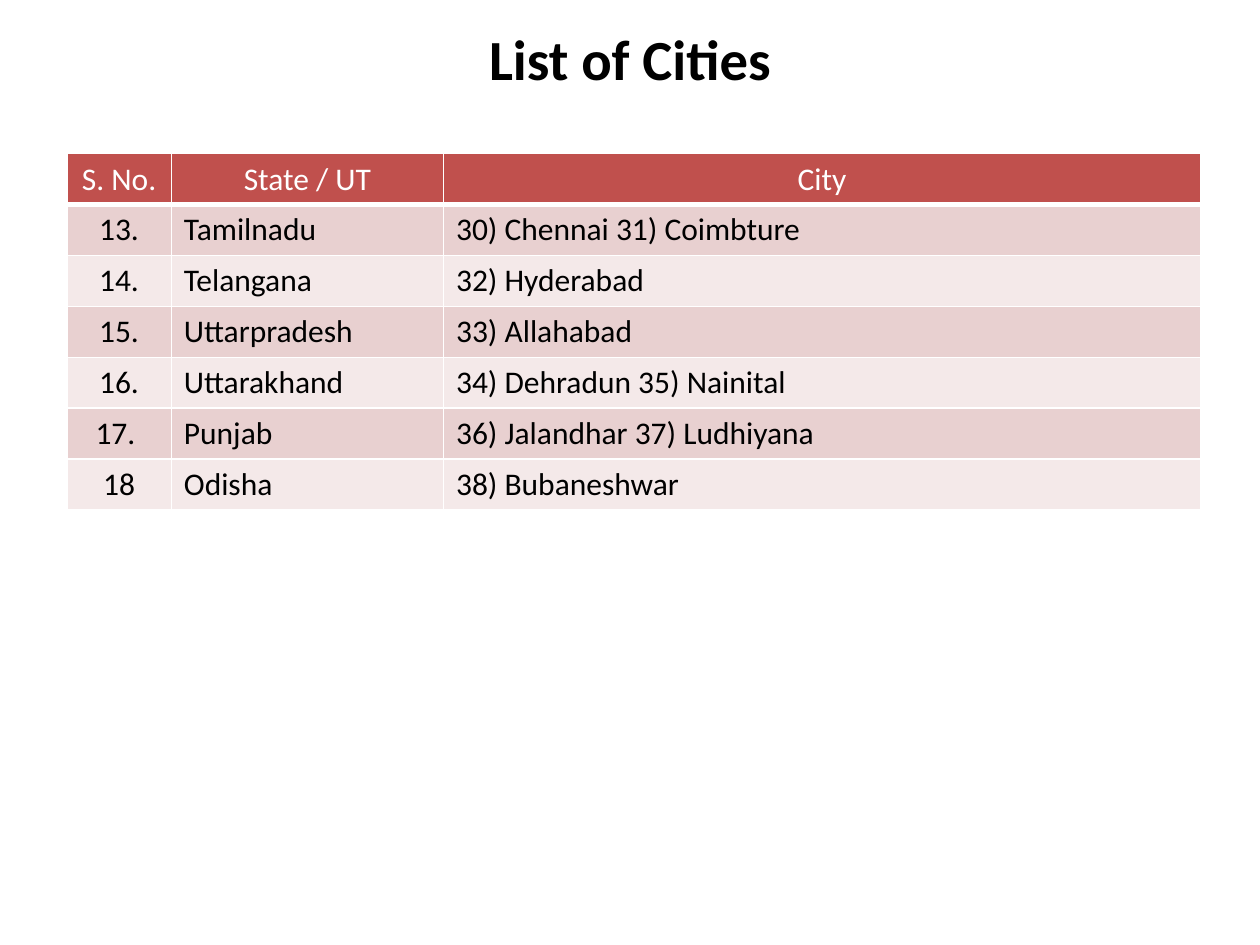
from lxml.etree import SubElement
from pptx import Presentation
from pptx.dml.color import RGBColor
from pptx.enum.text import MSO_ANCHOR, PP_ALIGN
from pptx.oxml.ns import qn
from pptx.util import Inches, Pt

HEADER = ("S. No.", "State / UT", "City")
CITIES = (
    ("13.", "Tamilnadu", "30) Chennai 31) Coimbture"),
    ("14.", "Telangana", "32) Hyderabad"),
    ("15.", "Uttarpradesh", "33) Allahabad"),
    ("16.", "Uttarakhand", "34) Dehradun 35) Nainital"),
    ("17. ", "Punjab", "36) Jalandhar 37) Ludhiyana"),
    ("18", "Odisha", "38) Bubaneshwar"),
)
COLUMN_WIDTHS = (0.83, 2.16, 6.01)
HEADER_FILL = "C0504D"
BAND_FILLS = ("F4E9E9", "E8D0D0")
WHITE, BLACK = "FFFFFF", "000000"


def color(hex_value):
    return RGBColor.from_string(hex_value)


def write(frame, text, size, hex_color, align, bold=False):
    frame.text = text
    paragraph = frame.paragraphs[0]
    paragraph.alignment = align
    font = paragraph.runs[0].font
    font.name = "Calibri"
    font.size = Pt(size)
    font.bold = bold
    font.color.rgb = color(hex_color)


def set_borders(cell, top, bottom):
    """Draw white cell borders; top and bottom are widths in points."""
    properties = cell._tc.get_or_add_tcPr()
    for side, width in (("L", 1), ("R", 1), ("T", top), ("B", bottom)):
        line = SubElement(properties, qn(f"a:ln{side}"), w=str(Pt(width)))
        fill = SubElement(line, qn("a:solidFill"))
        SubElement(fill, qn("a:srgbClr"), val=WHITE)


def add_title(slide, text):
    title = slide.shapes.add_textbox(Inches(0.5), Inches(0.14), Inches(9), Inches(0.64))
    frame = title.text_frame
    frame.word_wrap = True
    frame.vertical_anchor = MSO_ANCHOR.MIDDLE
    write(frame, text, 32.4, BLACK, PP_ALIGN.CENTER, bold=True)


def add_city_table(slide):
    rows = (HEADER, *CITIES)
    table = slide.shapes.add_table(
        len(rows), len(HEADER), Inches(0.53), Inches(1.22), Inches(9), Inches(2.83)
    ).table
    table.horz_banding = False
    for column, width in zip(table.columns, COLUMN_WIDTHS):
        column.width = Inches(width)

    for r, row in enumerate(rows):
        is_header = r == 0
        for c, text in enumerate(row):
            cell = table.cell(r, c)
            set_borders(cell, top=3 if r == 1 else 1, bottom=3 if is_header else 1)
            cell.fill.solid()
            cell.fill.fore_color.rgb = color(HEADER_FILL if is_header else BAND_FILLS[r % 2])
            centered = is_header or c == 0
            write(cell.text_frame, text, 18, WHITE if is_header else BLACK,
                  PP_ALIGN.CENTER if centered else PP_ALIGN.LEFT)


def main():
    presentation = Presentation()
    presentation.slide_width = Inches(10)
    presentation.slide_height = Inches(7.5)
    slide = presentation.slides.add_slide(presentation.slide_layouts[6])
    add_title(slide, "List of Cities")
    add_city_table(slide)
    presentation.save("out.pptx")


if __name__ == "__main__":
    main()
